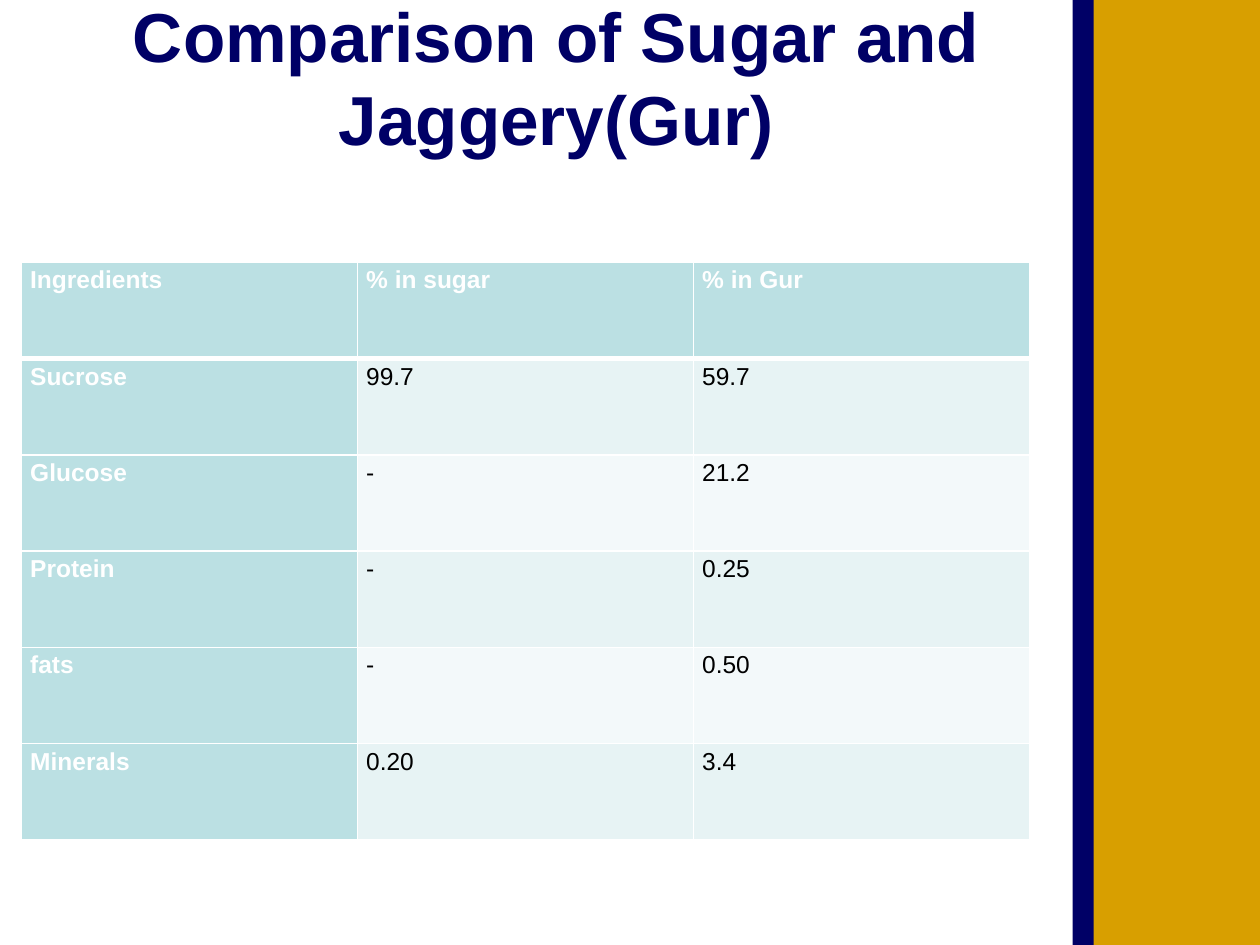
import pptx
import pptx.util
import pptx.dml.color
import pptx.enum.shapes
import pptx.enum.text
import pptx.oxml
import pptx.oxml.ns

Pt = pptx.util.Pt
ALIGN = pptx.enum.text.PP_ALIGN
ANCHOR = pptx.enum.text.MSO_ANCHOR

NAVY, GOLD, WHITE, BLACK = "000066", "D89F00", "FFFFFF", "000000"
HEAD_FILL, BAND_FILLS = "BBE0E3", ("F3F9FA", "E7F3F4")

TITLE = "Comparison of Sugar and Jaggery(Gur)"
ROWS = [
    ("Ingredients", "% in sugar", "% in Gur"),
    ("Sucrose", "99.7", "59.7"),
    ("Glucose", "-", "21.2"),
    ("Protein", "-", "0.25"),
    ("fats", "-", "0.50"),
    ("Minerals", "0.20", "3.4"),
]
# left, top, width, height, colour
BARS = [(624, 0, 96, 540, GOLD), (613, 0, 12, 540, NAVY)]
TABLE_LEFT, TABLE_TOP, COL_WIDTH, ROW_HEIGHT = 12.25, 150, 192, 55


def rgb(value):
    return pptx.dml.color.RGBColor.from_string(value)


def set_attrs(obj, values):
    for name, value in values.items():
        setattr(obj, name, value)


def write(p, text, size, color, bold=True):
    r = p.add_run()
    r.text = text
    set_attrs(r.font, {"size": Pt(size), "name": "Arial", "bold": bold})
    r.font.color.rgb = rgb(color)


def set_borders(cell, widths):
    """Put white borders on a cell; widths maps L, R, T, B to points."""
    tc_pr = cell._tc.get_or_add_tcPr()
    for i, (side, width) in enumerate(widths.items()):
        tc_pr.insert(i, pptx.oxml.parse_xml(
            f'<a:ln{side} {pptx.oxml.ns.nsdecls("a")} w="{Pt(width)}">'
            f'<a:solidFill><a:srgbClr val="{WHITE}"/></a:solidFill></a:ln{side}>'))


def add_title(s):
    title = s.shapes.title
    set_attrs(title, {"left": Pt(36), "top": Pt(21.6),
                      "width": Pt(564), "height": Pt(90)})
    tf = title.text_frame
    set_attrs(tf, {"auto_size": pptx.enum.text.MSO_AUTO_SIZE.NONE,
                   "word_wrap": True, "vertical_anchor": ANCHOR.MIDDLE,
                   "margin_top": Pt(3.6), "margin_bottom": Pt(50)})
    p = tf.paragraphs[0]
    set_attrs(p, {"alignment": ALIGN.CENTER, "line_spacing": Pt(47.5)})
    write(p, TITLE, 39.6, NAVY)


def add_sidebar(s):
    for left, top, width, height, color in BARS:
        bar = s.shapes.add_shape(pptx.enum.shapes.MSO_SHAPE.RECTANGLE,
                                 Pt(left), Pt(top), Pt(width), Pt(height))
        bar.shadow.inherit = False
        bar.fill.solid()
        bar.fill.fore_color.rgb = rgb(color)
        bar.line.fill.background()


def add_comparison(s):
    n_rows, n_cols = len(ROWS), len(ROWS[0])
    table = s.shapes.add_table(
        n_rows, n_cols, Pt(TABLE_LEFT), Pt(TABLE_TOP),
        Pt(COL_WIDTH * n_cols), Pt(ROW_HEIGHT * n_rows)).table
    table.first_col = True
    for column in table.columns:
        column.width = Pt(COL_WIDTH)
    for i, row in enumerate(ROWS):
        table.rows[i].height = Pt(ROW_HEIGHT)
        for j, text in enumerate(row):
            cell = table.cell(i, j)
            is_head = i == 0 or j == 0
            set_attrs(cell, {"margin_left": Pt(5), "margin_right": Pt(5),
                             "margin_top": 0, "margin_bottom": 0})
            cell.fill.solid()
            cell.fill.fore_color.rgb = rgb(HEAD_FILL if is_head else BAND_FILLS[i % 2])
            set_borders(cell, {"L": 1, "R": 1, "T": 3 if i == 1 else 1,
                               "B": 3 if i == 0 else 1})
            p = cell.text_frame.paragraphs[0]
            set_attrs(p, {"alignment": ALIGN.JUSTIFY, "line_spacing": 1.15})
            write(p, text, 14, WHITE if is_head else BLACK, is_head)


def main():
    prs = pptx.Presentation()
    set_attrs(prs, {"slide_width": Pt(720), "slide_height": Pt(540)})
    s = prs.slides.add_slide(prs.slide_layouts[5])
    s.background.fill.solid()
    s.background.fill.fore_color.rgb = rgb(WHITE)
    add_sidebar(s)
    add_title(s)
    add_comparison(s)
    prs.save("out.pptx")


if __name__ == "__main__":
    main()
